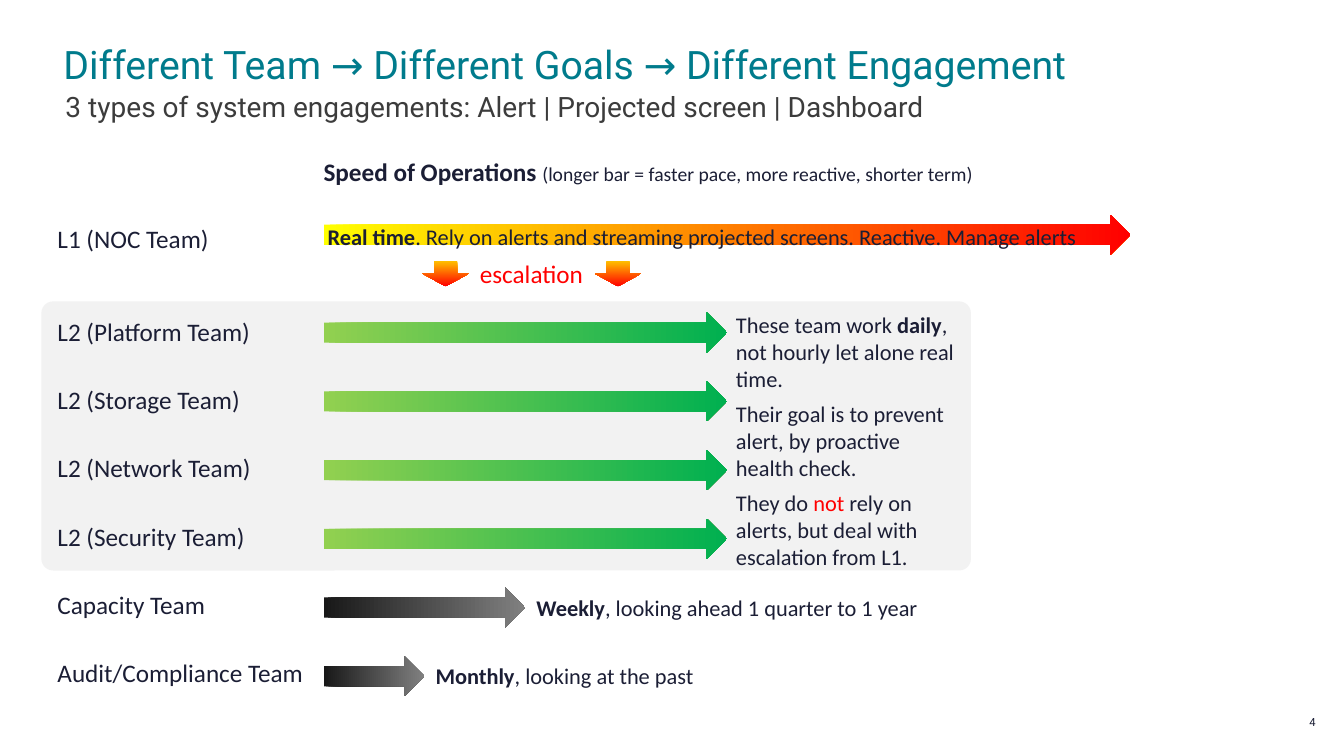
from pptx import Presentation
from pptx.dml.color import RGBColor
from pptx.enum.shapes import MSO_SHAPE as Shape
from pptx.enum.text import MSO_ANCHOR as Anchor, MSO_AUTO_SIZE as AutoSize, PP_ALIGN as Align
from pptx.util import Inches, Pt

INK, RED = "1B1E35", "FF0000"
GREEN, GREY = ("92D050", "00B050"), ("181818", "808080")
LABEL_X, BAR_X, BAR_HEIGHT = 0.57, 3.21, 0.4
LABEL_PITCH, BAR_PITCH = 0.676, 0.682
L1_TOP, L2_TOP = 2.13, 3.05

# Team, bar length in inches, bar colours
L2_TEAMS = [(f"L2 ({name} Team)", 4, GREEN)
            for name in ("Platform", "Storage", "Network", "Security")]
PLANNING_TEAMS = [("Capacity Team", 2, GREY), ("Audit/Compliance Team", 1, GREY)]


def colour(code):
    return RGBColor.from_string(code)


def add_text(page, box, *paras, size=18, font="Calibri", ink=INK, line=None, gap=0,
             wrap=True, grow=False, align=Align.LEFT, anchor=Anchor.TOP):
    """Each paragraph is a string or a list of (text, format) spans."""
    frame = page.shapes.add_textbox(*map(Inches, box)).text_frame
    frame.margin_left = frame.margin_right = frame.margin_top = frame.margin_bottom = 0
    frame.word_wrap = wrap
    frame.auto_size = AutoSize.SHAPE_TO_FIT_TEXT if grow else AutoSize.NONE
    frame.vertical_anchor = anchor
    for index, content in enumerate(paras):
        para = frame.add_paragraph() if index else frame.paragraphs[0]
        para.alignment = align
        if line:
            para.line_spacing = line
        if index:
            para.space_before = Pt(gap)
        for text, style in [(content, {})] if isinstance(content, str) else content:
            span = para.add_run()
            span.text = text
            span.font.name = font
            span.font.size = Pt(style.get("size", size))
            span.font.bold = style.get("bold", False)
            span.font.color.rgb = colour(style.get("ink", ink))


def add_label(page, box, content, **style):
    add_text(page, box, content, line=1.3, wrap=False, grow=True, **style)


def add_shape(page, kind, box, *colours, angle=0):
    """One colour gives a plain fill, two give a gradient."""
    shape = page.shapes.add_shape(kind, *map(Inches, box))
    shape.shadow.inherit = False
    shape.line.fill.background()
    if len(colours) == 1:
        shape.fill.solid()
        shape.fill.fore_color.rgb = colour(colours[0])
    else:
        shape.fill.gradient()
        shape.fill.gradient_angle = angle
        for stop, code in zip(shape.fill.gradient_stops, colours):
            stop.color.rgb = colour(code)
    return shape


def add_heading(page, left, top, width):
    add_text(page, (left, top, width, 0.42),
             "Different Team → Different Goals → Different Engagement",
             size=28, font="Roboto", ink="007B8C", line=0.9, anchor=Anchor.BOTTOM)
    add_text(page, (left + 0.02, top + 0.44, width, 0.27),
             "3 types of system engagements: Alert | Projected screen | Dashboard",
             size=20, font="Roboto", ink="3C3C3C")
    add_label(page, (BAR_X, top + 1.01, 6.5, 0.36),
              [("Speed of Operations ", {"bold": True}),
               ("(longer bar = faster pace, more reactive, shorter term)", {"size": 14})])


def add_first_line(page, top):
    add_label(page, (LABEL_X, top, 1.52, 0.36), "L1 (NOC Team)")
    add_shape(page, Shape.RIGHT_ARROW, (BAR_X, top, 8, BAR_HEIGHT), "FFFF00", RED)
    add_label(page, (BAR_X + 0.04, top, 7.57, 0.32),
              [("Real time", {"bold": True}),
               (". Rely on alerts and streaming projected screens. Reactive. Manage alerts", {})],
              size=16)
    # Escalation to the second line
    for left in (4.19, 5.9):
        add_shape(page, Shape.DOWN_ARROW, (left, top + 0.46, 0.46, 0.25),
                  "FFC000", RED, angle=270)
    add_label(page, (4.76, top + 0.36, 1.04, 0.36), "escalation", ink=RED, anchor=Anchor.MIDDLE)


def add_team_rows(page, top):
    for row, (team, length, colours) in enumerate(L2_TEAMS + PLANNING_TEAMS):
        add_label(page, (LABEL_X, top + row * LABEL_PITCH, 2.47, 0.36), team)
        bar_top = top + 0.05 + row * BAR_PITCH
        add_shape(page, Shape.RIGHT_ARROW, (BAR_X, bar_top, length, BAR_HEIGHT), *colours)


def add_l2_panel(page, left, top, width, height):
    panel = add_shape(page, Shape.ROUNDED_RECTANGLE, (left, top, width, height), "F2F2F2")
    panel.adjustments[0] = 0.044
    add_text(page, (left + 6.89, top + 0.1, 2.23, 2.59),
             [("These team work ", {}), ("daily", {"bold": True}),
              (", not hourly let alone real time.", {})],
             "Their goal is to prevent alert, by proactive health check.",
             [("They do ", {}), ("not", {"ink": RED}),
              (" rely on alerts, but deal with escalation from L1.", {})],
             size=16, gap=6, grow=True)


def add_planning_notes(page, top):
    notes = [("Weekly", ", looking ahead 1 quarter to 1 year"),
             ("Monthly", ", looking at the past")]
    for row, ((pace, detail), (_, length, _)) in enumerate(zip(notes, PLANNING_TEAMS)):
        add_text(page, (BAR_X + length + 0.11, top + row * BAR_PITCH, 4.27, 0.27),
                 [(pace, {"bold": True}), (detail, {})], size=16, grow=True)


def main():
    deck = Presentation()
    deck.slide_width, deck.slide_height = Inches(13.33), Inches(7.5)
    page = deck.slides.add_slide(deck.slide_layouts[6])
    add_l2_panel(page, 0.41, 2.99, 9.22, 2.67)
    add_heading(page, 0.63, 0.45, 12.03)
    add_first_line(page, L1_TOP)
    add_team_rows(page, L2_TOP)
    add_planning_notes(page, 5.89)
    # Page number
    add_text(page, (12.57, 7.07, 0.48, 0.2), "4", size=8, font="Roboto", line=0.9,
             align=Align.RIGHT, anchor=Anchor.MIDDLE)
    deck.save("out.pptx")


if __name__ == "__main__":
    main()
